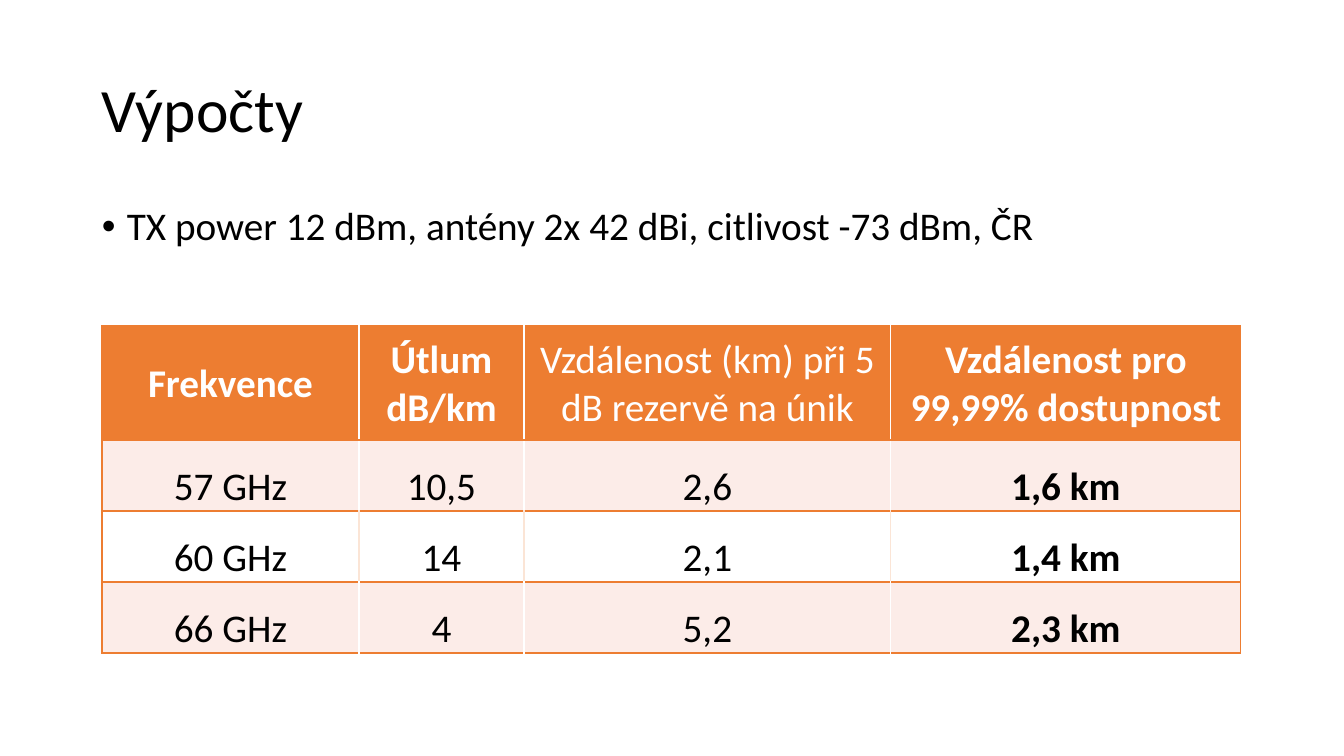
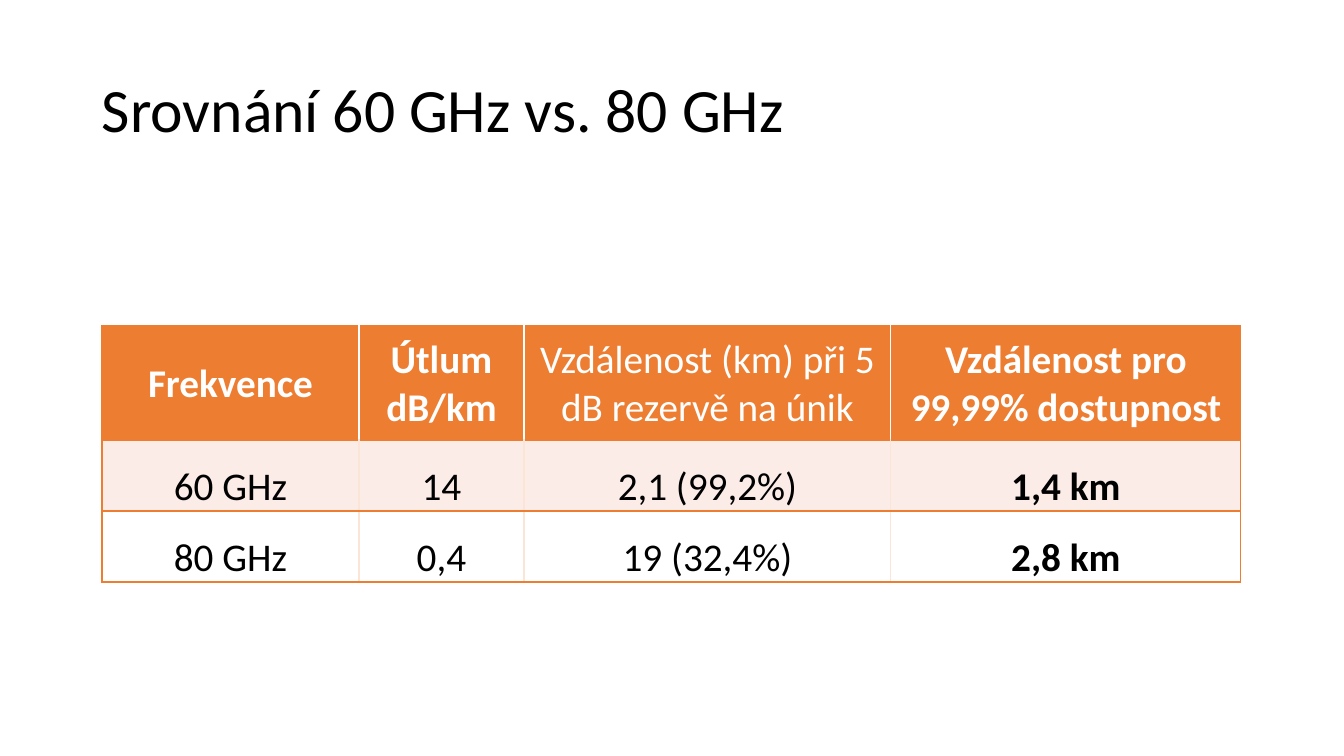
from lxml import etree
from pptx import Presentation
from pptx.dml.color import RGBColor
from pptx.enum.text import MSO_ANCHOR, PP_ALIGN
from pptx.oxml.ns import qn
from pptx.util import Emu, Pt

CENTER, LEFT = PP_ALIGN.CENTER, PP_ALIGN.LEFT
TOP, MIDDLE, BOTTOM = MSO_ANCHOR.TOP, MSO_ANCHOR.MIDDLE, MSO_ANCHOR.BOTTOM

# Shared style
FONT = "Calibri"
TITLE_SIZE, TEXT_SIZE = 44, 28
BLACK, WHITE = "000000", "FFFFFF"
ORANGE, BAND, PALE = "ED7D31", "FCECE8", "FBE5D6"

# Shared layout, in px
SLIDE_W, SLIDE_H = 1344, 756
TITLE_BOX = (92, 40, 1159, 146)
BODY_BOX = (92, 202, 1159, 480)
TABLE_POS = (102, 326)
COL_WIDTHS = (257, 165, 367, 350)
HEAD_H, ROW_H = 114, 71
CELL_INSET = 3
BULLET_INDENT = 25

HEADERS = ("Frekvence", "Útlum dB/km", "Vzdálenost (km) při 5 dB rezervě na únik",
           "Vzdálenost pro 99,99% dostupnost")
BOLD_HEADERS = (True, True, False, True)
BOLD_VALUES = (False, False, False, True)


def px(n):
    return Emu(round(n * 12192000 / SLIDE_W))


def rgb(color):
    return RGBColor.from_string(color)


def style_text(p, size, color=BLACK, bold=False, align=LEFT):
    p.alignment = align
    for r in p.runs:
        r.font.name = FONT
        r.font.size = Pt(size)
        r.font.bold = bold
        r.font.color.rgb = rgb(color)


def add_text(s, box, text, size, anchor):
    tf = s.shapes.add_textbox(*map(px, box)).text_frame
    tf.word_wrap = True
    tf.vertical_anchor = anchor
    p = tf.paragraphs[0]
    p.text = text
    p.line_spacing = 0.9
    style_text(p, size)
    return p


def add_title(s, box, text):
    add_text(s, box, text, TITLE_SIZE, MIDDLE)


def add_bullet(s, box, text):
    p = add_text(s, box, text, TEXT_SIZE, TOP)
    p.space_before = Pt(10)
    pPr = p._p.get_or_add_pPr()
    pPr.set("marL", str(px(BULLET_INDENT)))
    pPr.set("indent", str(-px(BULLET_INDENT)))
    etree.SubElement(pPr, qn("a:buFont"), typeface="Arial")
    etree.SubElement(pPr, qn("a:buChar"), char="•")


def set_borders(cell, left, right):
    tcPr = cell._tc.get_or_add_tcPr()
    sides = {"a:lnL": left, "a:lnR": right, "a:lnT": ORANGE, "a:lnB": ORANGE}
    for tag, color in sides.items():
        ln = etree.SubElement(tcPr, qn(tag), w=str(Pt(1)))
        fill = etree.SubElement(ln, qn("a:solidFill"))
        etree.SubElement(fill, qn("a:srgbClr"), val=color)


def fill_row(row, texts, bolds, fill, color, divider, anchor):
    last = len(texts) - 1
    for i, (cell, text, bold) in enumerate(zip(row.cells, texts, bolds)):
        # Borders precede the fill in the cell properties
        set_borders(cell, divider if i else ORANGE, divider if i < last else ORANGE)
        cell.fill.solid()
        cell.fill.fore_color.rgb = rgb(fill)
        cell.margin_left = cell.margin_right = cell.margin_top = px(CELL_INSET)
        cell.margin_bottom = 0
        cell.vertical_anchor = anchor
        p = cell.text_frame.paragraphs[0]
        p.text = text
        style_text(p, TEXT_SIZE, color, bold, CENTER)


def add_range_table(s, pos, rows, band_divider):
    heights = [HEAD_H] + [ROW_H] * len(rows)
    box = (*pos, sum(COL_WIDTHS), sum(heights))
    table = s.shapes.add_table(len(heights), len(COL_WIDTHS), *map(px, box)).table
    table.first_row = table.horz_banding = False
    for col, width in zip(table.columns, COL_WIDTHS):
        col.width = px(width)
    for row, height in zip(table.rows, heights):
        row.height = px(height)

    # Header, then rows banded in turn
    fill_row(table.rows[0], HEADERS, BOLD_HEADERS, ORANGE, WHITE, WHITE, MIDDLE)
    for i, values in enumerate(rows):
        fill, divider = (WHITE, PALE) if i % 2 else (BAND, band_divider)
        fill_row(table.rows[i + 1], values, BOLD_VALUES, fill, BLACK, divider, BOTTOM)


def add_range_slide(prs, title, rows, band_divider, bullet=None):
    s = prs.slides.add_slide(prs.slide_layouts[6])
    add_title(s, TITLE_BOX, title)
    if bullet:
        add_bullet(s, BODY_BOX, bullet)
    add_range_table(s, TABLE_POS, rows, band_divider)


def main():
    prs = Presentation()
    prs.slide_width, prs.slide_height = px(SLIDE_W), px(SLIDE_H)
    add_range_slide(
        prs, "Výpočty",
        [("57 GHz", "10,5", "2,6", "1,6 km"),
         ("60 GHz", "14", "2,1", "1,4 km"),
         ("66 GHz", "4", "5,2", "2,3 km")],
        WHITE, "TX power 12 dBm, antény 2x 42 dBi, citlivost -73 dBm, ČR")
    add_range_slide(
        prs, "Srovnání 60 GHz vs. 80 GHz",
        [("60 GHz", "14", "2,1 (99,2%)", "1,4 km"),
         ("80 GHz", "0,4", "19 (32,4%)", "2,8 km")],
        PALE)
    prs.save("out.pptx")


if __name__ == "__main__":
    main()
